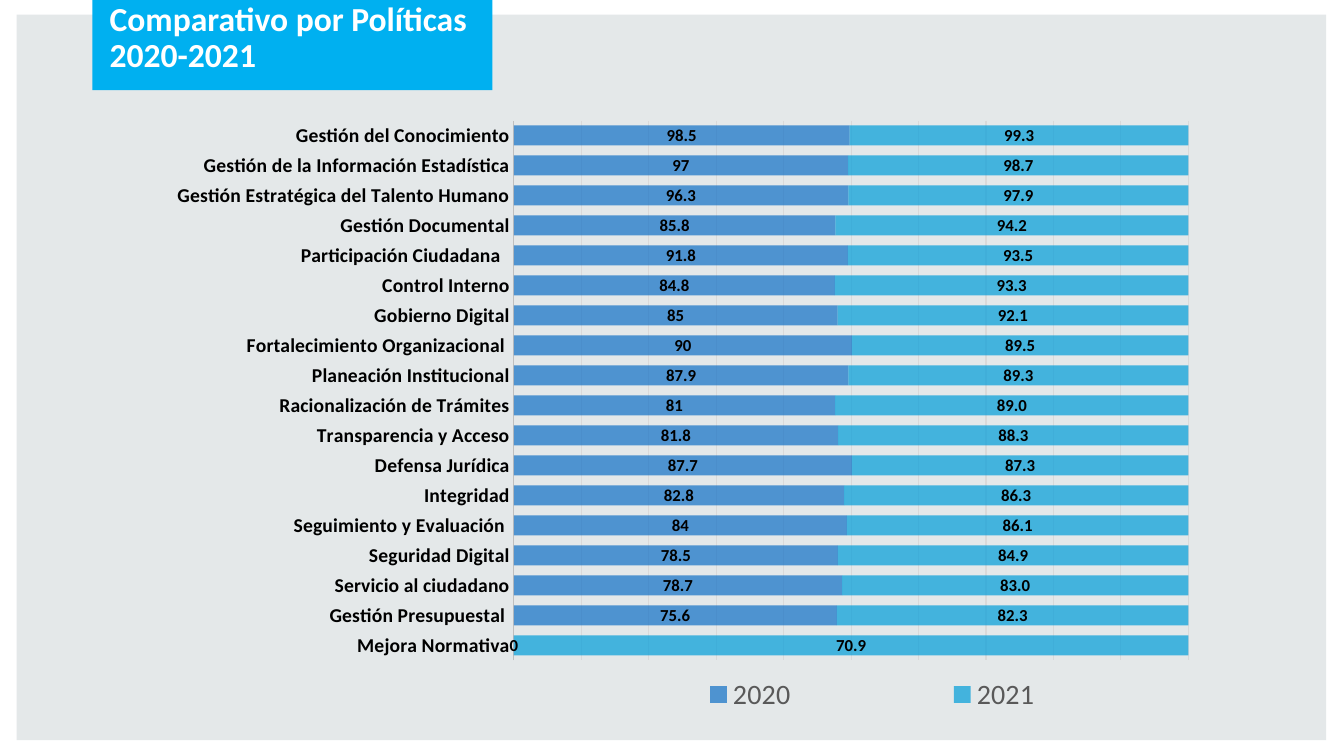
import pptx
import pptx.chart.data
import pptx.dml.color
import pptx.enum.chart
import pptx.enum.shapes
import pptx.enum.text
import pptx.oxml
import pptx.oxml.ns
import pptx.util
from lxml import etree

PX = 9525
FONT = "Calibri"
POLICIES = [
    ("Mejora Normativa", 0, 70.9),
    ("Gestión Presupuestal ", 75.6, 82.3),
    ("Servicio al ciudadano", 78.7, 83),
    ("Seguridad Digital", 78.5, 84.9),
    ("Seguimiento y Evaluación ", 84, 86.1),
    ("Integridad", 82.8, 86.3),
    ("Defensa Jurídica", 87.7, 87.3),
    ("Transparencia y Acceso", 81.8, 88.3),
    ("Racionalización de Trámites", 81, 89),
    ("Planeación Institucional", 87.9, 89.3),
    ("Fortalecimiento Organizacional ", 90, 89.5),
    ("Gobierno Digital", 85, 92.1),
    ("Control Interno", 84.8, 93.3),
    ("Participación Ciudadana  ", 91.8, 93.5),
    ("Gestión Documental", 85.8, 94.2),
    ("Gestión Estratégica del Talento Humano", 96.3, 97.9),
    ("Gestión de la Información Estadística", 97, 98.7),
    ("Gestión del Conocimiento", 98.5, 99.3),
]
YEARS = [("2020", "0F6FC6", "General"), ("2021", "009DD9", "0.0")]


def emu(*lengths):
    """Turn px lengths into EMU."""
    return [pptx.util.Emu(length * PX) for length in lengths]


def color(hex_code):
    """Return the colour of a hex string."""
    return pptx.dml.color.RGBColor.from_string(hex_code)


def style_font(font, size, hex_code, bold=False):
    """Set family, size, colour and weight."""
    font.name = FONT
    font.size = pptx.util.Pt(size)
    font.bold = bold
    font.color.rgb = color(hex_code)


def add_panel(slide, box, hex_code):
    """Draw a plain filled rectangle."""
    panel = slide.shapes.add_shape(pptx.enum.shapes.MSO_SHAPE.RECTANGLE, *emu(*box))
    panel.shadow.inherit = False
    panel.fill.solid()
    panel.fill.fore_color.rgb = color(hex_code)
    panel.line.fill.background()


def add_heading(slide, box):
    """Draw the blue banner and its title inside the box."""
    left, top, width, height = box
    add_panel(slide, box, "00B0F0")
    title = slide.shapes.add_textbox(*emu(left + 7, top + 14, width - 5, height - 24))
    frame = title.text_frame
    frame.word_wrap = True
    frame.vertical_anchor = pptx.enum.text.MSO_ANCHOR.BOTTOM
    paragraph = frame.paragraphs[0]
    paragraph.text = "Comparativo por Políticas 2020-2021"
    paragraph.line_spacing = 0.9
    style_font(paragraph.font, 24, "FFFFFF", True)


def place_part(part, x, y, w, h, inner=False):
    """Give a chart part a manual layout in fractions of the chart."""
    target = '<c:layoutTarget val="inner"/>' if inner else ""
    sizes = "".join(f'<c:{name} val="{value}"/>' for name, value in zip("xywh", (x, y, w, h)))
    layout = pptx.oxml.parse_xml(
        f'<c:layout {pptx.oxml.ns.nsdecls("c")}><c:manualLayout>{target}'
        f'<c:xMode val="edge"/><c:yMode val="edge"/>{sizes}</c:manualLayout></c:layout>'
    )
    for previous in part.findall(pptx.oxml.ns.qn("c:layout")):
        part.remove(previous)
    if inner:
        part.insert(0, layout)
    else:
        part.find(pptx.oxml.ns.qn("c:legendPos")).addnext(layout)


def style_series(series, hex_code, number_format):
    """Colour one year's bars and show their values."""
    series.format.fill.solid()
    series.format.fill.fore_color.rgb = color(hex_code)
    shade = next(series.format.fill._xPr.iter(pptx.oxml.ns.qn("a:srgbClr")))
    etree.SubElement(shade, pptx.oxml.ns.qn("a:alpha"), val="70000")
    labels = series.data_labels
    labels.show_value = True
    labels.position = pptx.enum.chart.XL_LABEL_POSITION.CENTER
    labels.number_format = number_format
    labels.number_format_is_linked = False
    style_font(labels.font, 12, "000000", True)


def style_axes(chart):
    """Set the policy axis and the hidden percentage axis."""
    no_tick = pptx.enum.chart.XL_TICK_MARK.NONE
    policies = chart.category_axis
    policies.major_tick_mark = policies.minor_tick_mark = no_tick
    policies.has_major_gridlines = False
    policies.format.line.color.rgb = color("BFBFBF")
    policies.format.line.width = pptx.util.Pt(0.75)
    style_font(policies.tick_labels.font, 14, "000000", True)
    shares = chart.value_axis
    shares.visible = False
    shares.minimum_scale, shares.maximum_scale, shares.major_unit = 0, 1, 0.1
    shares.has_major_gridlines = True
    shares.major_gridlines.format.line.color.rgb = color("D9D9D9")
    shares.major_gridlines.format.line.width = pptx.util.Pt(0.75)


def add_comparison(slide, box):
    """Draw the stacked comparison of both years in the box."""
    scores = pptx.chart.data.CategoryChartData()
    names, *yearly = zip(*POLICIES)
    scores.categories = names
    for (year, _, _), values in zip(YEARS, yearly):
        scores.add_series(year, values)
    kind = pptx.enum.chart.XL_CHART_TYPE.BAR_STACKED_100
    chart = slide.shapes.add_chart(kind, *emu(*box), scores).chart
    chart.has_title = False
    style_font(chart.font, 10, "000000")
    plot = chart.plots[0]
    plot.gap_width, plot.overlap = 50, 100
    plot.vary_by_categories = False
    for series, (_, hex_code, number_format) in zip(plot.series, YEARS):
        style_series(series, hex_code, number_format)
    style_axes(chart)
    chart.has_legend = True
    chart.legend.position = pptx.enum.chart.XL_LEGEND_POSITION.BOTTOM
    chart.legend.include_in_layout = False
    style_font(chart.legend.font, 20, "595959")
    place_part(chart._chartSpace.chart.plotArea, 0.34, 0.02, 0.64, 0.87, True)
    place_part(chart.legend._element, 0.38, 0.9, 0.6, 0.09)


def main():
    """Build and save the slide."""
    deck = pptx.Presentation()
    deck.slide_width, deck.slide_height = emu(1280, 720)
    slide = deck.slides.add_slide(deck.slide_layouts[6])
    add_panel(slide, (16, 14, 1247, 691), "E4E8E9")
    add_heading(slide, (88, 0, 381, 86))
    add_comparison(slide, (148, 103, 1004, 591))
    deck.save("out.pptx")


if __name__ == "__main__":
    main()
